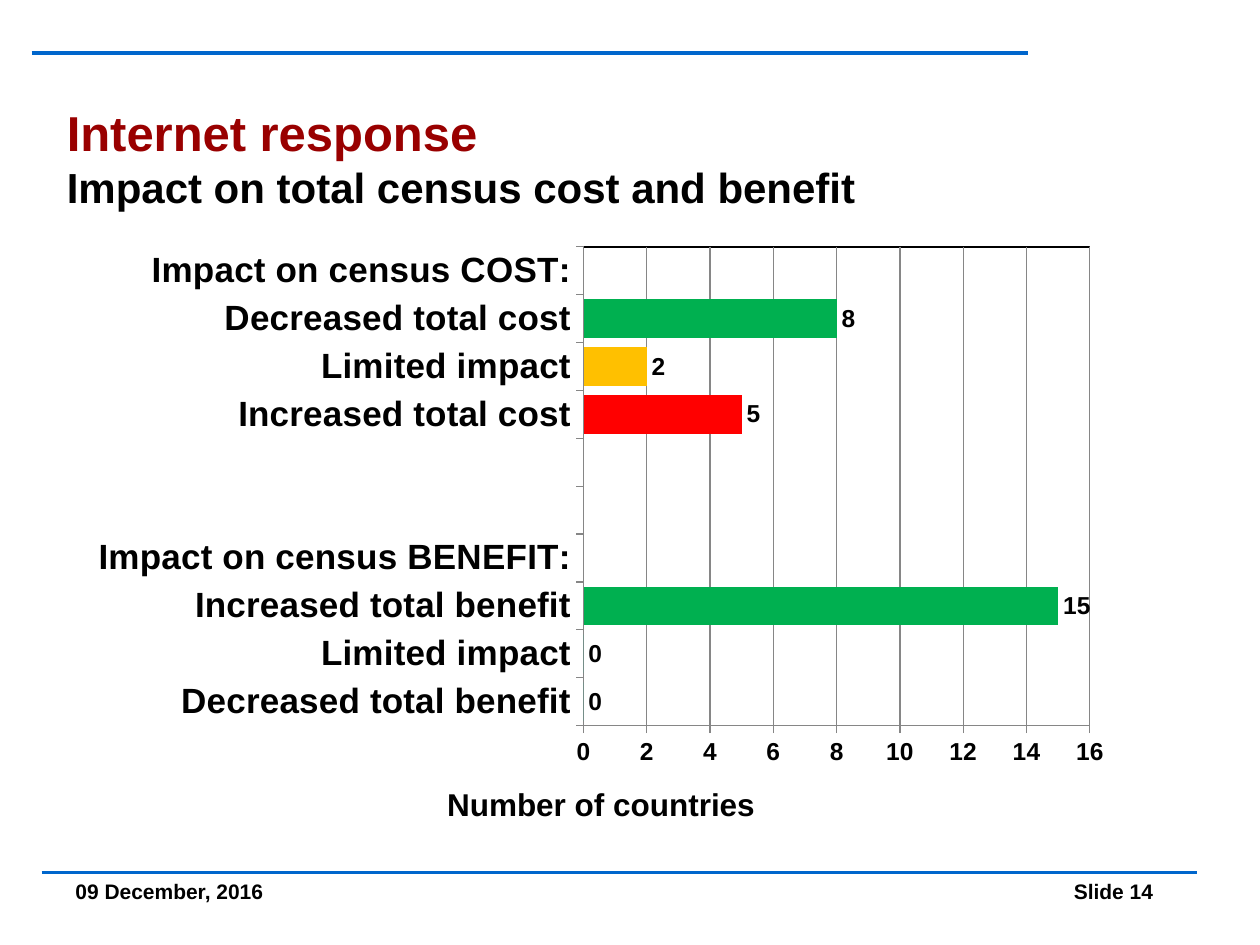
from lxml.etree import SubElement
from pptx import Presentation
from pptx.chart.data import CategoryChartData
from pptx.dml.color import RGBColor
from pptx.enum.chart import XL_CHART_TYPE, XL_LABEL_POSITION, XL_TICK_MARK
from pptx.enum.shapes import MSO_CONNECTOR
from pptx.enum.text import MSO_ANCHOR, PP_ALIGN
from pptx.oxml import parse_xml
from pptx.oxml.ns import nsdecls, qn
from pptx.util import Inches, Pt

WIDE, HIGH = Inches(10), Inches(7.5)
BLUE, BLACK, GRAY = "0066CC", "000000", "868686"
GREEN, AMBER, RED = "00B050", "FFC000", "FF0000"

# Rows from the bottom of the chart up: label, value, bar colour
ROWS = [
    ("Decreased total benefit", 0, None),
    ("Limited impact", 0, None),
    ("Increased total benefit", 15, GREEN),
    ("Impact on census BENEFIT:", None, None),
    ("", None, None),
    ("", None, None),
    ("Increased total cost", 5, RED),
    ("Limited impact", 2, AMBER),
    ("Decreased total cost", 8, GREEN),
    ("Impact on census COST:", None, None),
]


def color(code):
    return RGBColor.from_string(code)


def style(font, size, code=BLACK):
    font.name, font.size, font.bold = "Arial", Pt(size), True
    font.color.rgb = color(code)


def share(x, y, w, h):
    """Turn shares of the slide into a box."""
    return int(x * WIDE), int(y * HIGH), int(w * WIDE), int(h * HIGH)


def rule(slide, box, weight):
    """Draw a level line along the top of the box."""
    x, y, w, _ = box
    line = slide.shapes.add_connector(MSO_CONNECTOR.STRAIGHT, x, y, x + w, y)
    line.line.color.rgb, line.line.width = color(BLUE), Pt(weight)
    SubElement(line._element.spPr, qn("a:effectLst"))


def note(slide, box, text, align):
    frame = slide.shapes.add_textbox(*box).text_frame
    frame.word_wrap = True
    para = frame.paragraphs[0]
    para.text, para.alignment = text, align
    style(para.font, 12)


def header(slide, box):
    title = slide.shapes.title
    title.left, title.top, title.width, title.height = box
    frame = title.text_frame
    frame.vertical_anchor = MSO_ANCHOR.MIDDLE
    para = frame.paragraphs[0]
    para.alignment = PP_ALIGN.LEFT
    head = para.add_run()
    head.text = "Internet response "
    style(head.font, 28, "990000")
    para.add_line_break()
    sub = para.add_run()
    sub.text = "Impact on total census cost and benefit"
    style(sub.font, 24)


def footer(slide, box):
    x, y, w, h = box
    rule(slide, box, 1.5)
    pad, part = int(0.017 * WIDE), int(0.208 * WIDE)
    note(slide, (x + pad, y, part, h), "09 December, 2016", PP_ALIGN.LEFT)
    note(slide, (x + w - part - int(0.025 * WIDE), y, part, h), "Slide 14", PP_ALIGN.RIGHT)


def frame_plot(chart, x, y, w, h):
    """Fix the inner plot area, in shares of the chart, and outline it."""
    area = chart._chartSpace.chart.plotArea
    for old in area.findall(qn("c:layout")):
        area.remove(old)
    parts = "".join(f'<c:{tag} val="{val}"/>' for tag, val in (
        ("layoutTarget", "inner"), ("xMode", "edge"), ("yMode", "edge"),
        ("x", x), ("y", y), ("w", w), ("h", h)))
    area.insert(0, parse_xml(
        f'<c:layout {nsdecls("c")}><c:manualLayout>{parts}</c:manualLayout></c:layout>'))
    area.append(parse_xml(
        f'<c:spPr {nsdecls("c", "a")}><a:noFill/><a:ln w="9525"><a:solidFill>'
        f'<a:srgbClr val="{BLACK}"/></a:solidFill></a:ln></c:spPr>'))


def bars(slide, box):
    data = CategoryChartData()
    data.categories = [label for label, _, _ in ROWS]
    data.add_series("Series 1", [val for _, val, _ in ROWS])
    chart = slide.shapes.add_chart(XL_CHART_TYPE.BAR_CLUSTERED, *box, data).chart
    chart.has_legend = chart.has_title = False
    style(chart.font, 10)
    frame_plot(chart, 0.479, 0.051, 0.486, 0.754)

    # Axes
    cat, val = chart.category_axis, chart.value_axis
    for axis, size in ((cat, 20), (val, 14)):
        style(axis.tick_labels.font, size)
        axis.major_tick_mark = XL_TICK_MARK.OUTSIDE
        axis.minor_tick_mark = XL_TICK_MARK.NONE
        axis.format.line.color.rgb = color(GRAY)
    cat.has_major_gridlines = False
    val.has_major_gridlines = True
    val.major_gridlines.format.line.color.rgb = color(GRAY)
    val.minimum_scale, val.maximum_scale, val.major_unit = 0, 16, 2
    para = val.axis_title.text_frame.paragraphs[0]
    para.text = "Number of countries"
    style(para.font, 18)

    # Bars and their labels
    plot = chart.plots[0]
    plot.gap_width, plot.vary_by_categories = 25, False
    series = plot.series[0]
    series.format.fill.solid()
    series.format.fill.fore_color.rgb = color("00CC99")
    for i, (_, _, code) in enumerate(ROWS):
        if code:
            fill = series.points[i].format.fill
            fill.solid()
            fill.fore_color.rgb = color(code)
    labels = series.data_labels
    labels.show_value = True
    labels.position = XL_LABEL_POSITION.OUTSIDE_END
    style(labels.font, 14)


def main():
    deck = Presentation()
    deck.slide_width, deck.slide_height = WIDE, HIGH
    slide = deck.slides.add_slide(deck.slide_layouts[5])
    rule(slide, share(0.025, 0.056, 0.791, 0), 2.25)
    header(slide, share(0.043, 0.069, 0.916, 0.195))
    bars(slide, share(0.067, 0.227, 0.827, 0.672))
    footer(slide, share(0.033, 0.923, 0.917, 0.067))
    deck.save("out.pptx")


if __name__ == "__main__":
    main()
